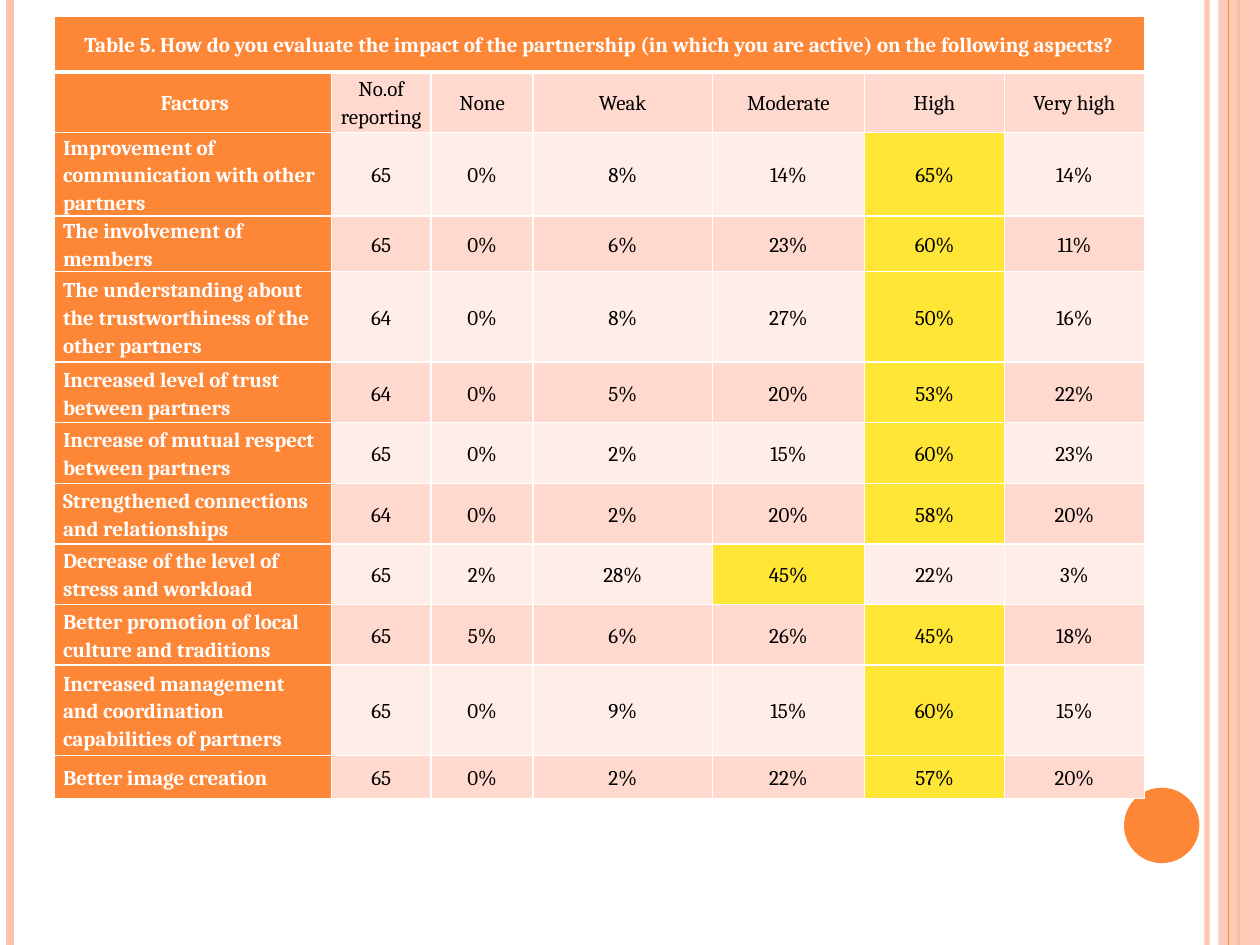
from lxml import etree
from pptx import Presentation
from pptx import util as u
from pptx.dml.color import RGBColor
from pptx.enum import shapes, text
from pptx.oxml.ns import qn

ORANGE, PEACH, YELLOW, WHITE, BLACK = "FE8637", "FEC3AE", "FFE636", "FFFFFF", "000000"
BANDS = ("FFD9CE", "FFEDE8")

CAPTION = ("Table 5. How do you evaluate the impact of the partnership "
           "(in which you are active) on the following aspects?")
HEADINGS = (" Factors", "No.of reporting", "None", "Weak", "Moderate", "High", "Very high")
FACTORS = [
    ("Improvement of communication with other partners", 65, (0, 8, 14, 65, 14)),
    ("The involvement of members", 65, (0, 6, 23, 60, 11)),
    ("The understanding about the trustworthiness of the other partners", 64, (0, 8, 27, 50, 16)),
    ("Increased level of trust between partners", 64, (0, 5, 20, 53, 22)),
    ("Increase of mutual respect between partners", 65, (0, 2, 15, 60, 23)),
    ("Strengthened connections and relationships", 64, (0, 2, 20, 58, 20)),
    ("Decrease of the level of stress and workload", 65, (2, 28, 45, 22, 3)),
    ("Better promotion of local culture and traditions", 65, (5, 6, 26, 45, 18)),
    ("Increased management and coordination capabilities of partners", 65, (0, 9, 15, 60, 15)),
    ("Better image creation", 65, (0, 2, 22, 57, 20)),
]
COLUMN_WIDTHS = (5.59, 2.01, 2.06, 3.61, 3.07, 2.82, 2.82)
ROW_HEIGHTS = (1.12, 1.22, 1.24, 0.84, 1.83, 1.22, 1.22, 1.22, 1.22, 1.22, 1.83, 0.86)
SLIDE_WIDTH, SLIDE_HEIGHT = 25.4, 19.05
LEFT_STRIPES = [(24.33, PEACH, 3, 93), (0.2, PEACH, 4.5, 100), (24.97, ORANGE, 1.5, 100)]
EDGE_STRIPE = (24.77, ORANGE, 0.75, 100)


def rgb(value):
    return RGBColor.from_string(value)


def paint(fill, color, opacity=100):
    fill.solid()
    fill.fore_color.rgb = rgb(color)
    if opacity < 100:
        for node in fill._xPr.iter(qn("a:srgbClr")):
            etree.SubElement(node, qn("a:alpha"), val=str(opacity * 1000))


def add_stripe(slide, x, color, width, opacity):
    stripe = slide.shapes.add_connector(
        shapes.MSO_CONNECTOR.STRAIGHT, u.Cm(x), 0, u.Cm(x), u.Cm(SLIDE_HEIGHT))
    stripe.line.width = u.Pt(width)
    paint(stripe.line.fill, color, opacity)
    etree.SubElement(stripe._element.spPr, qn("a:effectLst"))


def add_block(slide, kind, left, top, width, height, color, opacity=100):
    block = slide.shapes.add_shape(kind, *map(u.Cm, (left, top, width, height)))
    block.shadow.inherit = False
    paint(block.fill, color, opacity)
    block.line.fill.background()


def border(cell, **widths):
    properties = cell._tc.get_or_add_tcPr()
    for position, side in enumerate("LRTB"):
        edge = etree.Element(qn(f"a:ln{side}"), w=str(u.Pt(widths.get(side, 1))))
        solid = etree.SubElement(edge, qn("a:solidFill"))
        etree.SubElement(solid, qn("a:srgbClr"), val=WHITE)
        properties.insert(position, edge)


def write(cell, words, fill, color=BLACK, bold=False, align=text.PP_ALIGN.CENTER):
    paint(cell.fill, fill)
    cell.vertical_anchor = text.MSO_ANCHOR.MIDDLE
    cell.margin_left = cell.margin_right = u.Cm(0.18)
    cell.margin_top = cell.margin_bottom = 0
    paragraph = cell.text_frame.paragraphs[0]
    paragraph.alignment = align
    paragraph.line_spacing = 1.15
    run = paragraph.add_run()
    run.text = words
    run.font.name, run.font.size, run.font.bold = "Cambria", u.Pt(12), bold
    run.font.color.rgb = rgb(color)


def add_survey(slide):
    survey = slide.shapes.add_table(
        len(ROW_HEIGHTS), len(COLUMN_WIDTHS), u.Cm(1.09), u.Cm(0.33),
        u.Cm(sum(COLUMN_WIDTHS)), u.Cm(sum(ROW_HEIGHTS))).table
    survey.first_row = survey.horz_banding = False
    for column, width in zip(survey.columns, COLUMN_WIDTHS):
        column.width = u.Cm(width)
    for row, height in zip(survey.rows, ROW_HEIGHTS):
        row.height = u.Cm(height)

    survey.cell(0, 0).merge(survey.cell(0, len(COLUMN_WIDTHS) - 1))
    write(survey.cell(0, 0), CAPTION, ORANGE, WHITE, bold=True)
    for c, heading in enumerate(HEADINGS):
        if c == 0:
            write(survey.cell(1, c), heading, ORANGE, WHITE, bold=True)
        else:
            write(survey.cell(1, c), heading, BANDS[0])

    for r, (factor, reporting, shares) in enumerate(FACTORS, start=2):
        band = BANDS[(r - 1) % 2]
        write(survey.cell(r, 0), factor, ORANGE, WHITE, bold=True, align=text.PP_ALIGN.LEFT)
        write(survey.cell(r, 1), str(reporting), band)
        for c, share in enumerate(shares, start=2):
            write(survey.cell(r, c), f"{share}%", YELLOW if share == max(shares) else band)

    for r, row in enumerate(survey.rows):
        for cell in row.cells:
            border(cell, T=3 if r == 1 else 1, B=3 if r == 0 else 1)


def main():
    deck = Presentation()
    deck.slide_width, deck.slide_height = u.Cm(SLIDE_WIDTH), u.Cm(SLIDE_HEIGHT)
    slide = deck.slides.add_slide(deck.slide_layouts[6])
    for stripe in LEFT_STRIPES:
        add_stripe(slide, *stripe)
    add_block(slide, shapes.MSO_SHAPE.RECTANGLE, 24.56, 0, 0.84, SLIDE_HEIGHT, PEACH, 87)
    add_stripe(slide, *EDGE_STRIPE)
    add_block(slide, shapes.MSO_SHAPE.OVAL, 22.66, 15.88, 1.52, 1.52, ORANGE)
    add_survey(slide)
    deck.save("out.pptx")


if __name__ == "__main__":
    main()
